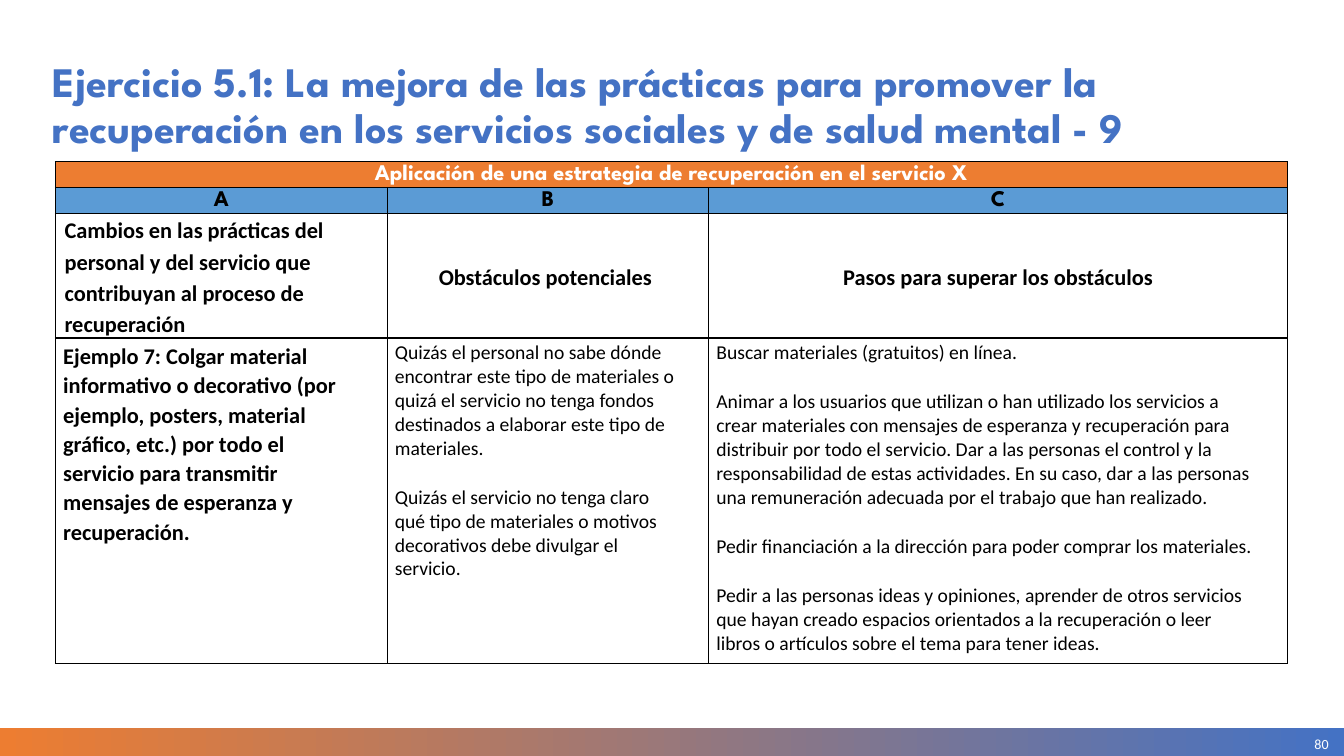
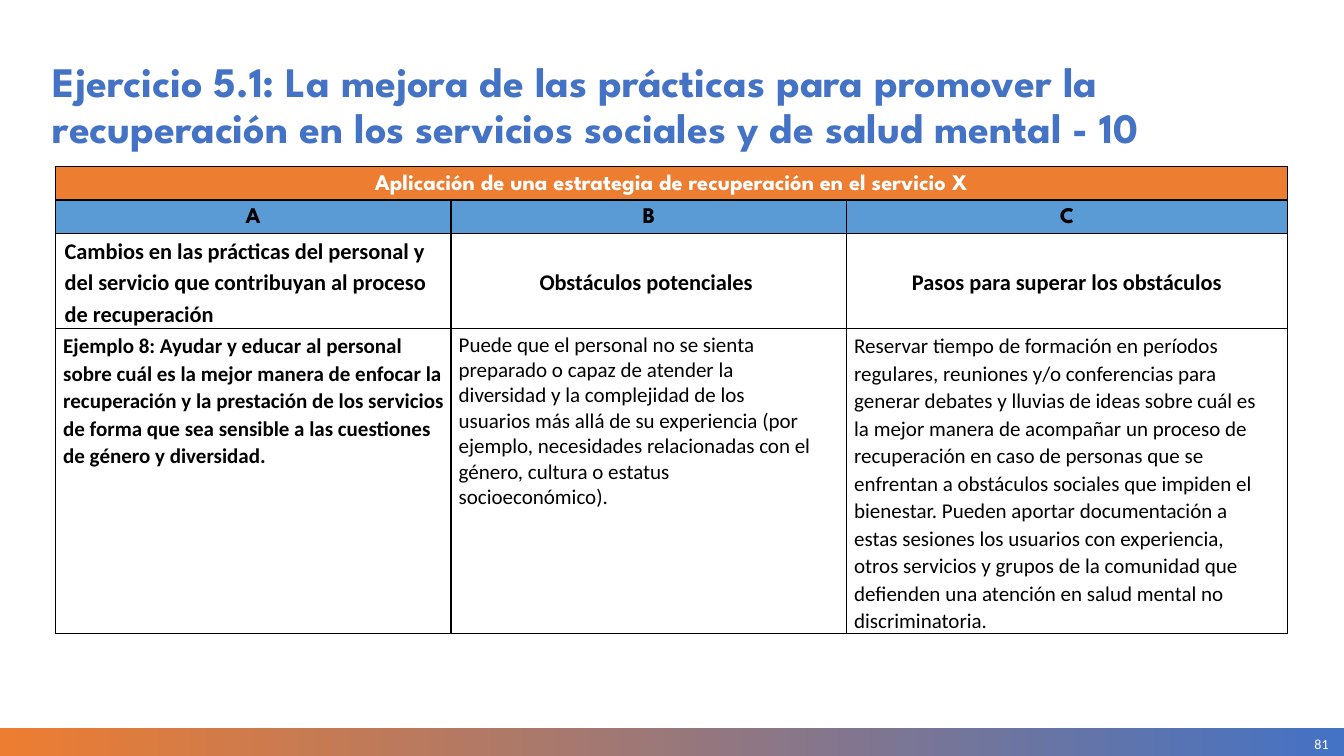
from dataclasses import dataclass, replace

from lxml import etree
from pptx import Presentation
from pptx import util as u
from pptx.dml.color import RGBColor
from pptx.enum import shapes, text
from pptx.oxml import ns

COLORS = {
    "orange": "ED7D31",
    "blue": "4472C4",
    "sky": "5B9BD5",
    "white": "FFFFFF",
    "black": "000000",
}
HEAD_FONT, BODY_FONT = "League Spartan", "Calibri"
WIDTH, HEIGHT = u.Inches(13.33), u.Inches(7.5)
TABLE_LEFT, TABLE_WIDTH = 4.13, 91.67
LEFT, CENTER, RIGHT = text.PP_ALIGN.LEFT, text.PP_ALIGN.CENTER, text.PP_ALIGN.RIGHT
TOP, MIDDLE = text.MSO_ANCHOR.TOP, text.MSO_ANCHOR.MIDDLE
HEAD_INSETS, BODY_INSETS = (6.5, 0, 6.5, 0), (5.5, 2.3, 3.6, 0)
TITLE = (
    "Ejercicio 5.1: La mejora de las prácticas para promover la "
    "recuperación en los servicios sociales y de salud mental - "
)
BANNER = "Aplicación de una estrategia de recuperación en el servicio X"
LETTERS = ("A", "B", "C")
HEADINGS = (
    "Cambios en las prácticas del personal y del servicio que contribuyan "
    "al proceso de recuperación",
    "Obstáculos potenciales ",
    "Pasos para superar los obstáculos",
)


@dataclass(frozen=True)
class Style:
    """Look of the paragraphs in one box."""

    size: float
    font: str = BODY_FONT
    color: str = "black"
    bold: bool = False
    align: text.PP_ALIGN = LEFT
    spacing: float = 1.0
    gap: float = 0


@dataclass(frozen=True)
class Entry:
    """Paragraphs of one cell with their style and right indents in points."""

    paragraphs: tuple[str, ...]
    style: Style
    indents: tuple[float, ...] = (0,)


@dataclass(frozen=True)
class Exercise:
    """One slide; top and rows are percent of height, columns of table width."""

    number: int
    page: int
    top: float
    band_spacing: float
    columns: tuple[float, ...]
    rows: tuple[float, ...]
    entries: tuple[Entry, ...]


TITLE_STYLE = Style(30, HEAD_FONT, "blue", True, spacing=0.9)
PAGE_STYLE = Style(10, color="white", align=RIGHT)
BANNER_STYLE = Style(16, HEAD_FONT, "white", True, CENTER)
LETTER_STYLE = replace(BANNER_STYLE, color="black")
HEADING_STYLES = tuple(
    Style(16, bold=True, align=align, spacing=1.15) for align in (LEFT, CENTER, CENTER)
)
LIST_STYLE = Style(14, gap=18)

EXERCISES = (
    Exercise(
        9, 80, 21.4, 0.95, (26.92, 26.1, 46.98), (3.4, 3.4, 16.53, 43),
        (
            Entry(
                (
                    "Ejemplo 7: Colgar material informativo o decorativo (por ejemplo, "
                    "posters, material gráfico, etc.) por todo el servicio para "
                    "transmitir mensajes de esperanza y recuperación.",
                ),
                Style(16, bold=True, spacing=1.07),
                (24,),
            ),
            Entry(
                (
                    "Quizás el personal no sabe dónde encontrar este tipo de materiales "
                    "o quizá el servicio no tenga fondos destinados a elaborar este "
                    "tipo de materiales.",
                    "Quizás el servicio no tenga claro qué tipo de materiales o motivos "
                    "decorativos debe divulgar el servicio.",
                ),
                LIST_STYLE,
                (17, 17),
            ),
            Entry(
                (
                    "Buscar materiales (gratuitos) en línea.",
                    "Animar a los usuarios que utilizan o han utilizado los servicios a "
                    "crear materiales con mensajes de esperanza y recuperación para "
                    "distribuir por todo el servicio. Dar a las personas el control y "
                    "la responsabilidad de estas actividades. En su caso, dar a las "
                    "personas una remuneración adecuada por el trabajo que han realizado.",
                    "Pedir financiación a la dirección para poder comprar los materiales.",
                    "Pedir a las personas ideas y opiniones, aprender de otros servicios "
                    "que hayan creado espacios orientados a la recuperación o leer "
                    "libros o artículos sobre el tema para tener ideas.",
                ),
                LIST_STYLE,
                (0, 17, 0, 0),
            ),
        ),
    ),
    Exercise(
        10, 81, 22, 1.15, (32.1, 32.1, 35.8), (4.45, 4.45, 12.6, 40.3),
        (
            Entry(
                (
                    "Ejemplo 8: Ayudar y educar al personal sobre cuál es la mejor "
                    "manera de enfocar la recuperación y la prestación de los servicios "
                    "de forma que sea sensible a las cuestiones de género y diversidad.",
                ),
                Style(15, bold=True, spacing=1.07),
            ),
            Entry(
                (
                    "Puede que el personal no se sienta preparado o capaz de atender la "
                    "diversidad y la complejidad de los usuarios más allá de su "
                    "experiencia (por ejemplo, necesidades relacionadas con el género, "
                    "cultura o estatus socioeconómico).",
                ),
                Style(15, spacing=0.99),
                (17,),
            ),
            Entry(
                (
                    "Reservar tiempo de formación en períodos regulares, reuniones y/o "
                    "conferencias para generar debates y lluvias de ideas sobre cuál es "
                    "la mejor manera de acompañar un proceso de recuperación en caso de "
                    "personas que se enfrentan a obstáculos sociales que impiden el "
                    "bienestar. Pueden aportar documentación a estas sesiones los "
                    "usuarios con experiencia, otros servicios y grupos de la comunidad "
                    "que defienden una atención en salud mental no discriminatoria.",
                ),
                Style(15, spacing=1.07),
                (17,),
            ),
        ),
    ),
)


def across(percent: float) -> int:
    """Return a share of the slide's width."""
    return round(WIDTH * percent / 100)


def down(percent: float) -> int:
    """Return a share of the slide's height."""
    return round(HEIGHT * percent / 100)


def rgb(name: str) -> RGBColor:
    """Look up a palette colour."""
    return RGBColor.from_string(COLORS[name])


def write(tf, entry: Entry) -> None:
    """Fill a text frame with styled paragraphs."""
    style = entry.style
    for i, (words, indent) in enumerate(zip(entry.paragraphs, entry.indents, strict=True)):
        p = tf.add_paragraph() if i else tf.paragraphs[0]
        p.alignment, p.line_spacing = style.align, style.spacing
        if i:
            p.space_before = u.Pt(style.gap)
        if indent:
            p._p.get_or_add_pPr().set("marR", str(u.Pt(indent)))
        r = p.add_run()
        r.text = words
        r.font.name, r.font.size, r.font.bold = style.font, u.Pt(style.size), style.bold
        r.font.color.rgb = rgb(style.color)


def add_text(s, box: tuple[float, ...], words: str, style: Style, anchor, insets) -> None:
    """Add a wrapped text box placed by shares of the slide."""
    left, top, width, height = box
    tf = s.shapes.add_textbox(across(left), down(top), across(width), down(height)).text_frame
    tf.word_wrap, tf.vertical_anchor = True, anchor
    tf.margin_left, tf.margin_top, tf.margin_right, tf.margin_bottom = map(u.Pt, insets)
    write(tf, Entry((words,), style))


def add_band(s) -> None:
    """Add the gradient band at the foot of the slide."""
    sp = s.shapes.add_shape(
        shapes.MSO_SHAPE.RECTANGLE, 0, down(96.27), WIDTH, HEIGHT - down(96.27)
    )
    sp.shadow.inherit = False
    sp.line.fill.background()
    sp.fill.gradient()
    sp.fill.gradient_angle = 0
    for stop, name, position in zip(sp.fill.gradient_stops, ("orange", "blue"), (0, 1)):
        stop.color.rgb, stop.position = rgb(name), position


def add_borders(cell) -> None:
    """Draw a thin black line on each side of a cell."""
    props = cell._tc.get_or_add_tcPr()
    for i, side in enumerate(("lnL", "lnR", "lnT", "lnB")):
        line = etree.Element(ns.qn(f"a:{side}"), w=str(u.Pt(1)))
        fill = etree.SubElement(line, ns.qn("a:solidFill"))
        etree.SubElement(fill, ns.qn("a:srgbClr"), val=COLORS["black"])
        props.insert(i, line)


def fill_cell(cell, entry: Entry, fill: str | None, anchor, insets) -> None:
    """Write one cell and set its fill, anchor and insets."""
    cell.vertical_anchor = anchor
    cell.margin_left, cell.margin_top, cell.margin_right, cell.margin_bottom = map(
        u.Pt, insets
    )
    if fill:
        cell.fill.solid()
        cell.fill.fore_color.rgb = rgb(fill)
    else:
        cell.fill.background()
    write(cell.text_frame, entry)


def add_strategy_table(s, exercise: Exercise) -> None:
    """Add the table of changes, obstacles and steps."""
    table = s.shapes.add_table(
        len(exercise.rows), len(exercise.columns), across(TABLE_LEFT), down(exercise.top),
        across(TABLE_WIDTH), down(sum(exercise.rows)),
    ).table
    table.first_row = table.horz_banding = False
    for column, share in zip(table.columns, exercise.columns):
        column.width = across(TABLE_WIDTH * share / 100)
    for row, share in zip(table.rows, exercise.rows):
        row.height = down(share)
    table.cell(0, 0).merge(table.cell(0, len(exercise.columns) - 1))
    banner_style, letter_style = (
        replace(style, spacing=exercise.band_spacing) for style in (BANNER_STYLE, LETTER_STYLE)
    )
    letters = tuple(Entry((letter,), letter_style) for letter in LETTERS)
    headings = tuple(Entry((h,), style) for h, style in zip(HEADINGS, HEADING_STYLES))
    bands = (
        ((Entry((BANNER,), banner_style),), "orange", MIDDLE, HEAD_INSETS),
        (letters, "sky", MIDDLE, HEAD_INSETS),
        (headings, None, MIDDLE, HEAD_INSETS),
        (exercise.entries, None, TOP, BODY_INSETS),
    )
    for i, (entries, fill, anchor, insets) in enumerate(bands):
        for j, entry in enumerate(entries):
            fill_cell(table.cell(i, j), entry, fill, anchor, insets)
    for cell in table.iter_cells():
        add_borders(cell)


def add_exercise(prs, exercise: Exercise) -> None:
    """Add one exercise slide."""
    s = prs.slides.add_slide(prs.slide_layouts[6])
    add_band(s)
    add_text(s, (85.4, 96.8, 13.45, 3.2), str(exercise.page), PAGE_STYLE, MIDDLE, (0,) * 4)
    add_strategy_table(s, exercise)
    add_text(
        s, (3.2, 7.47, 94, 13), f"{TITLE}{exercise.number}", TITLE_STYLE, TOP,
        (7.2, 3.6, 7.2, 3.6),
    )


def main() -> None:
    """Build and save the presentation."""
    prs = Presentation()
    prs.slide_width, prs.slide_height = WIDTH, HEIGHT
    for exercise in EXERCISES:
        add_exercise(prs, exercise)
    prs.save("out.pptx")


if __name__ == "__main__":
    main()
